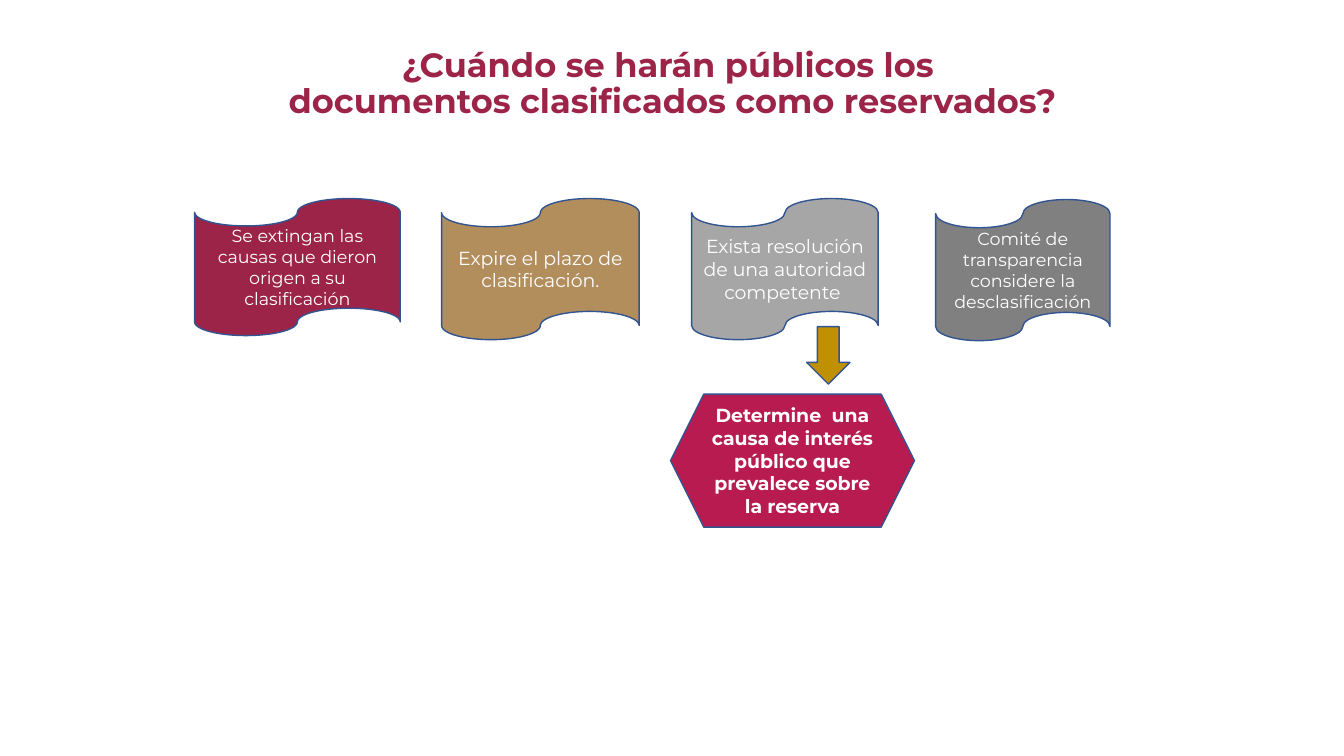
from pptx import Presentation
from pptx.dml.color import RGBColor
from pptx.enum.shapes import MSO_SHAPE as SHAPE
from pptx.enum.text import MSO_ANCHOR as ANCHOR, PP_ALIGN as ALIGN
from pptx.util import Inches, Pt

TITLE_ONLY = 5


def rgb(value):
    return RGBColor.from_string(value)


class Deck:
    font = "Montserrat"
    outline = "325491"
    white = "FFFFFF"
    wine = "9D2449"

    def __init__(self, width, height):
        self.prs = Presentation()
        self.prs.slide_width = Inches(width)
        self.prs.slide_height = Inches(height)

    def add_slide(self):
        self.s = self.prs.slides.add_slide(self.prs.slide_layouts[TITLE_ONLY])

    def run(self, p, text, size, color, bold=False):
        r = p.add_run()
        r.text = text
        r.font.name = self.font
        r.font.size = Pt(size)
        r.font.bold = bold
        r.font.color.rgb = rgb(color)

    def title(self, lines, left, top, width, height, size=24):
        sp = self.s.shapes.title
        sp.left, sp.top = Inches(left), Inches(top)
        sp.width, sp.height = Inches(width), Inches(height)
        tf = sp.text_frame
        tf.word_wrap = True
        tf.vertical_anchor = ANCHOR.BOTTOM
        p = tf.paragraphs[0]
        p.alignment = ALIGN.CENTER
        p.line_spacing = 0.9
        for i, line in enumerate(lines):
            if i:
                p.add_line_break()
            self.run(p, line, size, self.wine, bold=True)

    def shape(self, kind, left, top, width, height, fill):
        sp = self.s.shapes.add_shape(
            kind, Inches(left), Inches(top), Inches(width), Inches(height))
        sp.shadow.inherit = False
        sp.fill.solid()
        sp.fill.fore_color.rgb = rgb(fill)
        sp.line.color.rgb = rgb(self.outline)
        sp.line.width = Pt(1)
        return sp

    def text_shape(self, kind, box, fill, text, size, bold=False):
        tf = self.shape(kind, *box, fill).text_frame
        tf.word_wrap = True
        tf.vertical_anchor = ANCHOR.MIDDLE
        p = tf.paragraphs[0]
        p.alignment = ALIGN.CENTER
        self.run(p, text, size, self.white, bold)


def main():
    deck = Deck(13.33, 7.5)
    deck.add_slide()
    deck.title(["¿Cuándo se harán públicos los ",
                "documentos clasificados como reservados?"],
               0.92, 0.4, 11.5, 0.85)

    cases = [
        ((1.93, 1.97, 2.04, 1.36), deck.wine, 12.5,
         "Se extingan las causas que dieron origen a su clasificación"),
        ((4.38, 1.97, 1.96, 1.4), "B38E5D", 13.5,
         "Expire el plazo de clasificación."),
        ((6.86, 1.97, 1.85, 1.4), "A6A6A6", 13.5,
         "Exista resolución de una autoridad competente "),
        ((9.28, 1.98, 1.73, 1.4), "808080", 12.5,
         "Comité de transparencia considere la desclasificación"),
    ]
    for box, fill, size, text in cases:
        deck.text_shape(SHAPE.FLOWCHART_PUNCHED_TAPE, box, fill, text, size)

    deck.text_shape(SHAPE.HEXAGON, (6.65, 3.91, 2.42, 1.32), "B81B50",
                    "Determine  una causa de interés público que prevalece "
                    "sobre la reserva", 13.5, bold=True)
    arrow = deck.shape(SHAPE.RIGHT_ARROW, 7.93, 3.31, 0.57, 0.43, "BF9000")
    arrow.rotation = 90

    deck.prs.save("out.pptx")


if __name__ == "__main__":
    main()
